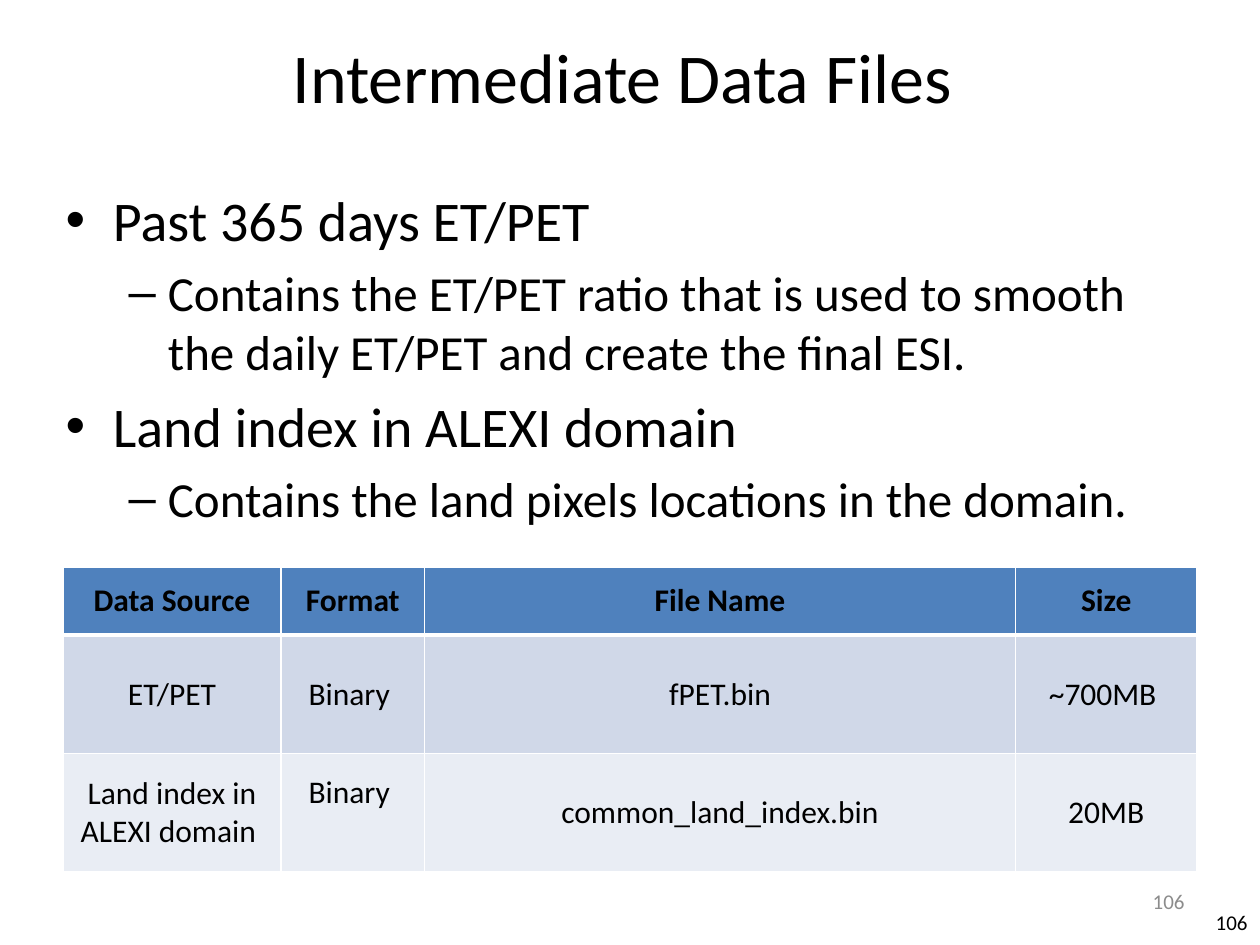
from dataclasses import dataclass

from lxml import etree
from pptx import Presentation
from pptx import util as u
from pptx.dml.color import RGBColor
from pptx.enum import text as t
from pptx.oxml.ns import qn


@dataclass(frozen=True)
class Theme:
    face: str = "Calibri"
    ink: str = "000000"
    gray: str = "8C8C8C"
    rule: str = "FFFFFF"
    fills: tuple = ("4F81BD", "D0D8E8", "E9EDF4")
    title: int = 40
    body: tuple = (32, 28)
    cell: int = 18
    note: int = 12


@dataclass(frozen=True)
class Box:
    left: float
    top: float
    width: float
    height: float

    def dims(self) -> list:
        return [u.Inches(v) for v in (self.left, self.top, self.width, self.height)]


@dataclass(frozen=True)
class Item:
    words: str
    level: int = 0


THEME = Theme()
ITEMS = [
    Item("Past 365 days ET/PET"),
    Item("Contains the ET/PET ratio that is used to smooth the daily ET/PET "
         "and create the final ESI.", 1),
    Item("Land index in ALEXI domain"),
    Item("Contains the land pixels locations in the domain.", 1),
]
COLS = [1.73, 1.14, 4.69, 1.44]
ROWS = [0.54, 0.94, 0.94]
DATA = [
    ["Data Source", "Format", "File Name", "Size"],
    ["ET/PET", "Binary ", "fPET.bin", "~700MB "],
    ["Land index in ALEXI domain ", "Binary ", "common_land_index.bin", "20MB"],
]
PAGES = [(Box(9.25, 7.12, 0.75, 0.4), THEME.ink),
         (Box(7.17, 6.95, 2.33, 0.4), THEME.gray)]


def assign(obj, form: dict) -> None:
    for name, value in form.items():
        setattr(obj, name, value)


def style(para, size: int, color: str = THEME.ink, bold: bool = False, **form) -> None:
    assign(para, form)
    assign(para.font, {"name": THEME.face, "size": u.Pt(size), "bold": bold})
    para.font.color.rgb = RGBColor.from_string(color)


def place(shape, box: Box) -> None:
    assign(shape, dict(zip(("left", "top", "width", "height"), box.dims())))


def add_title(slide) -> None:
    shape = slide.shapes.title
    place(shape, Box(0.5, 0.3, 9, 0.7))
    frame = shape.text_frame
    frame.text = "Intermediate Data Files "
    assign(frame, {"vertical_anchor": t.MSO_ANCHOR.MIDDLE,
                   "auto_size": t.MSO_AUTO_SIZE.NONE})
    style(frame.paragraphs[0], THEME.title, alignment=t.PP_ALIGN.CENTER,
          line_spacing=0.85)


def add_list(slide, items: list[Item]) -> None:
    shape = slide.placeholders[1]
    place(shape, Box(0.42, 1.42, 9, 3.67))
    frame = shape.text_frame
    frame.auto_size = t.MSO_AUTO_SIZE.NONE
    frame.text = "\n".join(item.words for item in items)
    for i, (para, item) in enumerate(zip(frame.paragraphs, items)):
        size = THEME.body[item.level]
        style(para, size, level=item.level,
              space_before=u.Pt(0.2 * size if i else 0))


def add_edges(cell, widths: dict[str, int]) -> None:
    """Cell borders come before the fill in the cell properties."""
    props = cell._tc.get_or_add_tcPr()
    for i, (side, width) in enumerate(widths.items()):
        line = etree.Element(qn(f"a:ln{side}"), w=str(u.Pt(width)))
        fill = etree.SubElement(line, qn("a:solidFill"))
        etree.SubElement(fill, qn("a:srgbClr"), val=THEME.rule)
        props.insert(i, line)


def add_grid(slide) -> None:
    box = Box(0.5, 4.5, sum(COLS), sum(ROWS))
    grid = slide.shapes.add_table(len(ROWS), len(COLS), *box.dims()).table
    for col, width in zip(grid.columns, COLS):
        col.width = u.Inches(width)
    for r, (row, height) in enumerate(zip(grid.rows, ROWS)):
        row.height = u.Inches(height)
        for cell, words in zip(row.cells, DATA[r]):
            cell.text = words
            cell.vertical_anchor = t.MSO_ANCHOR.MIDDLE
            cell.fill.solid()
            cell.fill.fore_color.rgb = RGBColor.from_string(THEME.fills[r])
            style(cell.text_frame.paragraphs[0], THEME.cell, bold=r == 0,
                  alignment=t.PP_ALIGN.CENTER)
            add_edges(cell, {"L": 1, "R": 1, "T": 3 if r == 1 else 1,
                             "B": 3 if r == 0 else 1})
    # The last format lines up with the first line of its neighbour
    grid.cell(2, 1).margin_bottom = u.Inches(0.36)


def add_page(slide, box: Box, color: str) -> None:
    frame = slide.shapes.add_textbox(*box.dims()).text_frame
    assign(frame, {"word_wrap": True, "text": "106",
                   "vertical_anchor": t.MSO_ANCHOR.MIDDLE})
    style(frame.paragraphs[0], THEME.note, color, alignment=t.PP_ALIGN.RIGHT)


def main() -> None:
    deck = Presentation()
    assign(deck, {"slide_width": u.Inches(10), "slide_height": u.Inches(7.5)})
    slide = deck.slides.add_slide(deck.slide_layouts[1])
    add_title(slide)
    add_list(slide, ITEMS)
    add_grid(slide)
    for box, color in PAGES:
        add_page(slide, box, color)
    deck.save("out.pptx")


if __name__ == "__main__":
    main()
